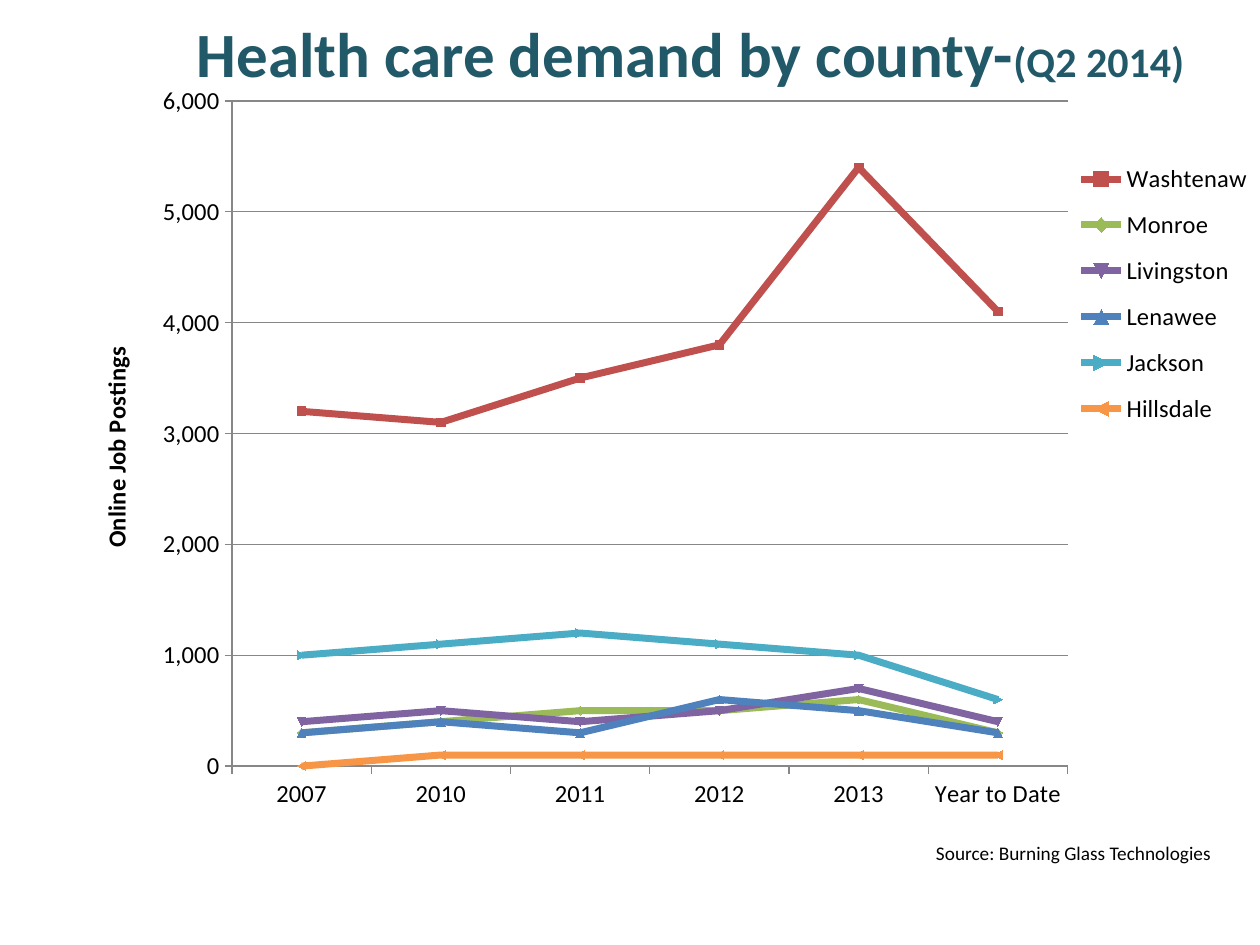
from lxml.etree import SubElement
from pptx import Presentation
from pptx.chart.data import CategoryChartData
from pptx.dml.color import RGBColor
from pptx.enum.chart import XL_CHART_TYPE as ChartType, XL_LEGEND_POSITION as LegendSide
from pptx.enum.chart import XL_TICK_MARK as Tick
from pptx.enum.text import MSO_ANCHOR as Anchor, PP_ALIGN as Align
from pptx.oxml.ns import qn
from pptx.util import Inches, Pt

FONT = "Calibri"
COLORS = {
    "title": "215968", "text": "000000", "grid": "878787",
    "Washtenaw": "C0504D", "Monroe": "9BBB59", "Livingston": "8064A2",
    "Lenawee": "4F81BD", "Jackson": "4BACC6", "Hillsdale": "F79646",
}
YEARS = ["2007", "2010", "2011", "2012", "2013", "Year to Date"]
POSTINGS = {
    "Washtenaw": [3200, 3100, 3500, 3800, 5400, 4100],
    "Monroe": [300, 400, 500, 500, 600, 300],
    "Livingston": [400, 500, 400, 500, 700, 400],
    "Lenawee": [300, 400, 300, 600, 500, 300],
    "Jackson": [1000, 1100, 1200, 1100, 1000, 600],
    "Hillsdale": [0, 100, 100, 100, 100, 100],
}
# Regions in inches: left, top, width, height
TITLE_BOX = (0.98, 0, 9, 0.83)
CHART_BOX = (0.75, 0.67, 9.25, 5.96)
SOURCE_BOX = (7.33, 6.63, 2.42, 0.43)
# Shares of the chart's size: left, top, width, height
PLOT_SHARE = (0.118, 0.022, 0.717, 0.886)
LEGEND_SHARE = (0.836, 0.085, 0.164, 0.388)


def color(name):
    return RGBColor.from_string(COLORS[name])


def set_font(font, size, name="text", bold=False):
    font.name, font.size, font.bold = FONT, Pt(size), bold
    font.color.rgb = color(name)


def set_layout(parent, share, before, inner=False):
    """Place a chart part by hand, ahead of the named sibling tag."""
    for old in parent.findall(qn("c:layout")):
        parent.remove(old)
    layout = SubElement(parent, qn("c:layout"))
    manual = SubElement(layout, qn("c:manualLayout"))
    settings = [("layoutTarget", "inner")] if inner else []
    settings += [("xMode", "edge"), ("yMode", "edge")]
    settings += zip("xywh", share)
    for tag, value in settings:
        SubElement(manual, qn(f"c:{tag}")).set("val", str(value))
    parent.find(qn(before)).addprevious(layout)


def add_title(page, box):
    title = page.shapes.title
    title.left, title.top, title.width, title.height = map(Inches, box)
    frame = title.text_frame
    frame.vertical_anchor = Anchor.MIDDLE
    para = frame.paragraphs[0]
    para.alignment = Align.CENTER
    set_font(para.font, 36, "title", True)
    para.add_run().text = "Health care demand by county-"
    period = para.add_run()
    period.text = "(Q2 2014)"
    period.font.size = Pt(24)


def style_axis(axis):
    axis.major_tick_mark, axis.minor_tick_mark = Tick.OUTSIDE, Tick.NONE
    set_font(axis.tick_labels.font, 14)
    axis.format.line.color.rgb = color("grid")


def add_line_chart(page, box):
    data = CategoryChartData(number_format="#,##0")
    data.categories = YEARS
    for county, values in POSTINGS.items():
        data.add_series(county, values)
    chart = page.shapes.add_chart(
        ChartType.LINE_MARKERS, *map(Inches, box), data).chart
    chart.has_title = False
    set_font(chart.font, 10)

    # Axes
    style_axis(chart.category_axis)
    scale = chart.value_axis
    style_axis(scale)
    scale.minimum_scale, scale.maximum_scale, scale.major_unit = 0, 6000, 1000
    scale.tick_labels.number_format = "#,##0"
    scale.tick_labels.number_format_is_linked = False
    scale.has_major_gridlines = True
    scale.major_gridlines.format.line.color.rgb = color("grid")
    para = scale.axis_title.text_frame.paragraphs[0]
    para.add_run().text = "Online Job Postings"
    set_font(para.font, 14, bold=True)

    # County lines
    chart.plots[0].vary_by_categories = False
    for series in chart.plots[0].series:
        series.smooth = False
        line = series.format.line
        line.width = Pt(4)
        line.color.rgb = color(series.name)

    # Legend and plot area
    chart.has_legend = True
    legend = chart.legend
    legend.position = LegendSide.RIGHT
    legend.include_in_layout = False
    set_font(legend.font, 14)
    set_layout(legend._element, LEGEND_SHARE, "c:overlay")
    plot_area = chart._chartSpace.chart.plotArea
    set_layout(plot_area, PLOT_SHARE, "c:lineChart", inner=True)


def add_source(page, box):
    frame = page.shapes.add_textbox(*map(Inches, box)).text_frame
    frame.word_wrap = False
    para = frame.paragraphs[0]
    para.text = "Source: Burning Glass Technologies"
    set_font(para.font, 11)


def main():
    deck = Presentation()
    deck.slide_width, deck.slide_height = Inches(10), Inches(7.5)
    page = deck.slides.add_slide(deck.slide_layouts.get_by_name("Title Only"))
    add_title(page, TITLE_BOX)
    add_source(page, SOURCE_BOX)
    add_line_chart(page, CHART_BOX)
    deck.save("out.pptx")


if __name__ == "__main__":
    main()
